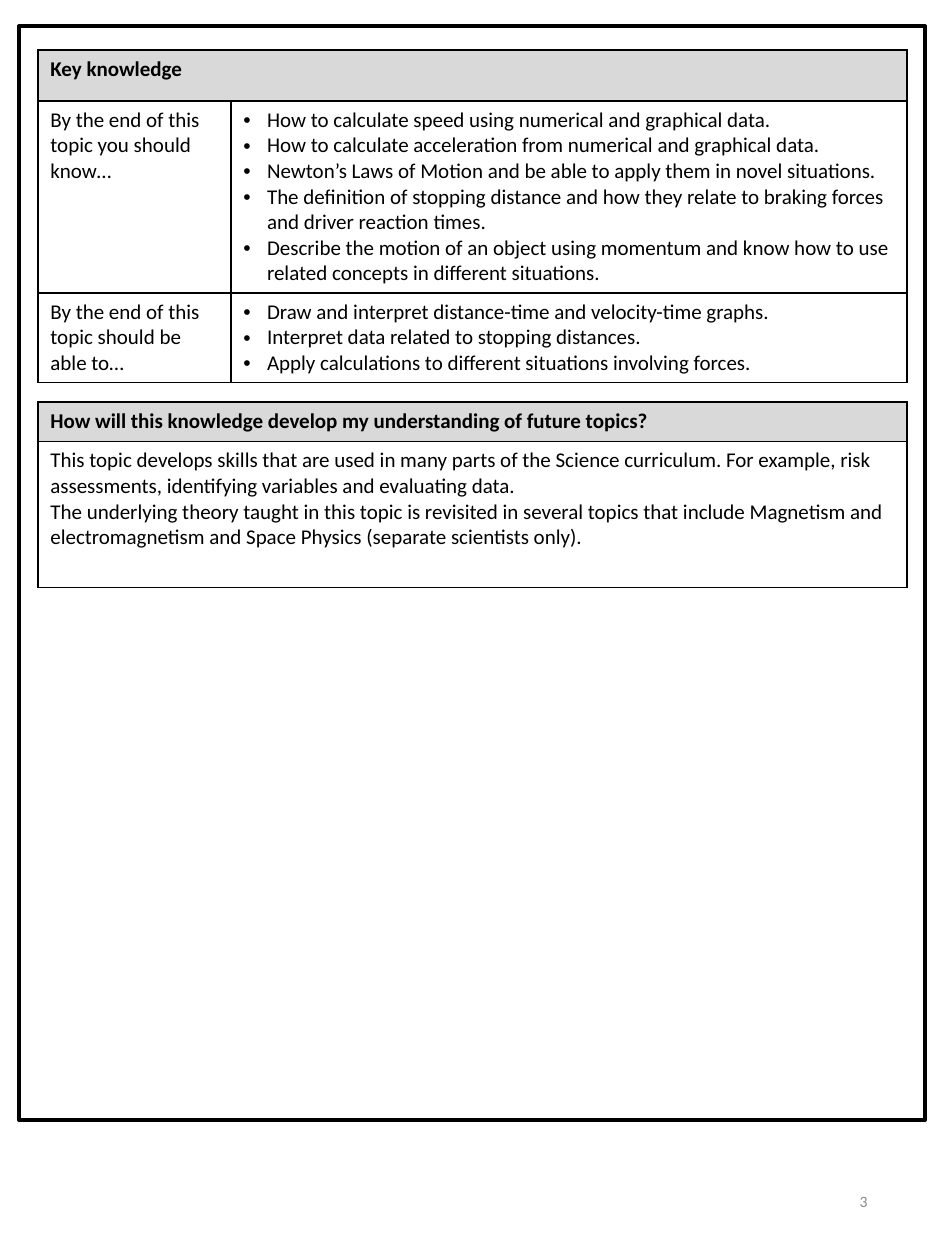
"""Build the key knowledge page of a forces and motion topic overview."""
from lxml.etree import SubElement
from pptx import Presentation
from pptx.dml.color import RGBColor
from pptx.enum.shapes import MSO_SHAPE
from pptx.enum.text import MSO_ANCHOR, PP_ALIGN
from pptx.oxml.ns import qn
from pptx.util import Pt

BLACK = RGBColor(0x00, 0x00, 0x00)
HEADER_GREY = RGBColor(0xD9, 0xD9, 0xD9)
NUMBER_GREY = RGBColor(0x8C, 0x8C, 0x8C)

MARGIN, TABLE_WIDTH = 21.6, 496.8
BULLET_INDENT = 13.5

KNOW = [
    "How to calculate speed using numerical and graphical data.",
    "How to calculate acceleration from numerical and graphical data.",
    "Newton’s Laws of Motion and be able to apply them in novel situations.",
    "The definition of stopping distance and how they relate to braking forces and driver reaction times.",
    "Describe the motion of an object using momentum and know how to use related concepts in different situations.",
]
ABLE = [
    "Draw and interpret distance-time and velocity-time graphs.",
    "Interpret data related to stopping distances.",
    "Apply calculations to different situations involving forces.",
]
FUTURE = [
    "This topic develops skills that are used in many parts of the Science curriculum. "
    "For example, risk assessments, identifying variables and evaluating data.",
    "The underlying theory taught in this topic is revisited in several topics that include "
    "Magnetism and electromagnetism and Space Physics (separate scientists only).",
]


class Page:
    """Hold the text style and the current slide."""

    def __init__(self, slide, font="Calibri", size=12):
        self.s, self.font, self.size = slide, font, size

    def add_text(self, tf, lines, size=None, color=BLACK, bold=False, bullet=False, align=PP_ALIGN.LEFT):
        for i, line in enumerate(lines):
            p = tf.paragraphs[0] if i == 0 else tf.add_paragraph()
            p.alignment = align
            if bullet:
                pPr = p._p.get_or_add_pPr()
                pPr.set("marL", str(Pt(BULLET_INDENT)))
                pPr.set("indent", str(-Pt(BULLET_INDENT)))
                SubElement(pPr, qn("a:buFont"), typeface="Arial")
                SubElement(pPr, qn("a:buChar"), char="•")
            r = p.add_run()
            r.text = line
            r.font.name, r.font.size = self.font, Pt(size or self.size)
            r.font.bold, r.font.color.rgb = bold, color

    def frame(self, x, y, w, h):
        sp = self.s.shapes.add_shape(MSO_SHAPE.RECTANGLE, Pt(x), Pt(y), Pt(w), Pt(h))
        sp.shadow.inherit = False
        sp.fill.background()
        sp.line.color.rgb, sp.line.width = BLACK, Pt(2.25)

    def style_cell(self, cell, header):
        tcPr = cell._tc.get_or_add_tcPr()
        for side in ("lnL", "lnR", "lnT", "lnB"):
            ln = SubElement(tcPr, qn(f"a:{side}"), w=str(Pt(1)))
            fill = SubElement(ln, qn("a:solidFill"))
            SubElement(fill, qn("a:srgbClr"), val=str(BLACK))
        if header:
            cell.fill.solid()
            cell.fill.fore_color.rgb = HEADER_GREY
        else:
            cell.fill.background()

    def table(self, y, widths, heights, title, rows):
        shape = self.s.shapes.add_table(
            len(heights), len(widths), Pt(MARGIN), Pt(y), Pt(sum(widths)), Pt(sum(heights)))
        tbl = shape.table
        tbl.first_row = tbl.horz_banding = False
        for col, width in zip(tbl.columns, widths):
            col.width = Pt(width)
        for i, height in enumerate(heights):
            tbl.rows[i].height = Pt(height)
            for j in range(len(widths)):
                self.style_cell(tbl.cell(i, j), header=i == 0)
        if len(widths) > 1:
            tbl.cell(0, 0).merge(tbl.cell(0, len(widths) - 1))
        self.add_text(tbl.cell(0, 0).text_frame, [title], bold=True)
        for i, row in enumerate(rows, 1):
            for j, lines in enumerate(row):
                self.add_text(tbl.cell(i, j).text_frame, lines, bullet=j > 0)

    def number(self, text, x, y, w, h):
        tf = self.s.shapes.add_textbox(Pt(x), Pt(y), Pt(w), Pt(h)).text_frame
        tf.word_wrap = True
        tf.vertical_anchor = MSO_ANCHOR.MIDDLE
        self.add_text(tf, [text], size=9, color=NUMBER_GREY, align=PP_ALIGN.RIGHT)


def main():
    prs = Presentation()
    prs.slide_width, prs.slide_height = Pt(540), Pt(720)
    page = Page(prs.slides.add_slide(prs.slide_layouts[6]))
    page.frame(10.8, 15, 517.8, 625)
    page.table(229.7, [TABLE_WIDTH], [22.7, 83.5],
               "How will this knowledge develop my understanding of future topics?", [[FUTURE]])
    page.table(28.6, [110.3, TABLE_WIDTH - 110.3], [29.2, 109.7, 51], "Key knowledge", [
        [["By the end of this topic you should know…"], KNOW],
        [["By the end of this topic should be able to…"], ABLE],
    ])
    page.number("3", 381.4, 667.4, 121.5, 38.3)
    prs.save("out.pptx")


if __name__ == "__main__":
    main()
